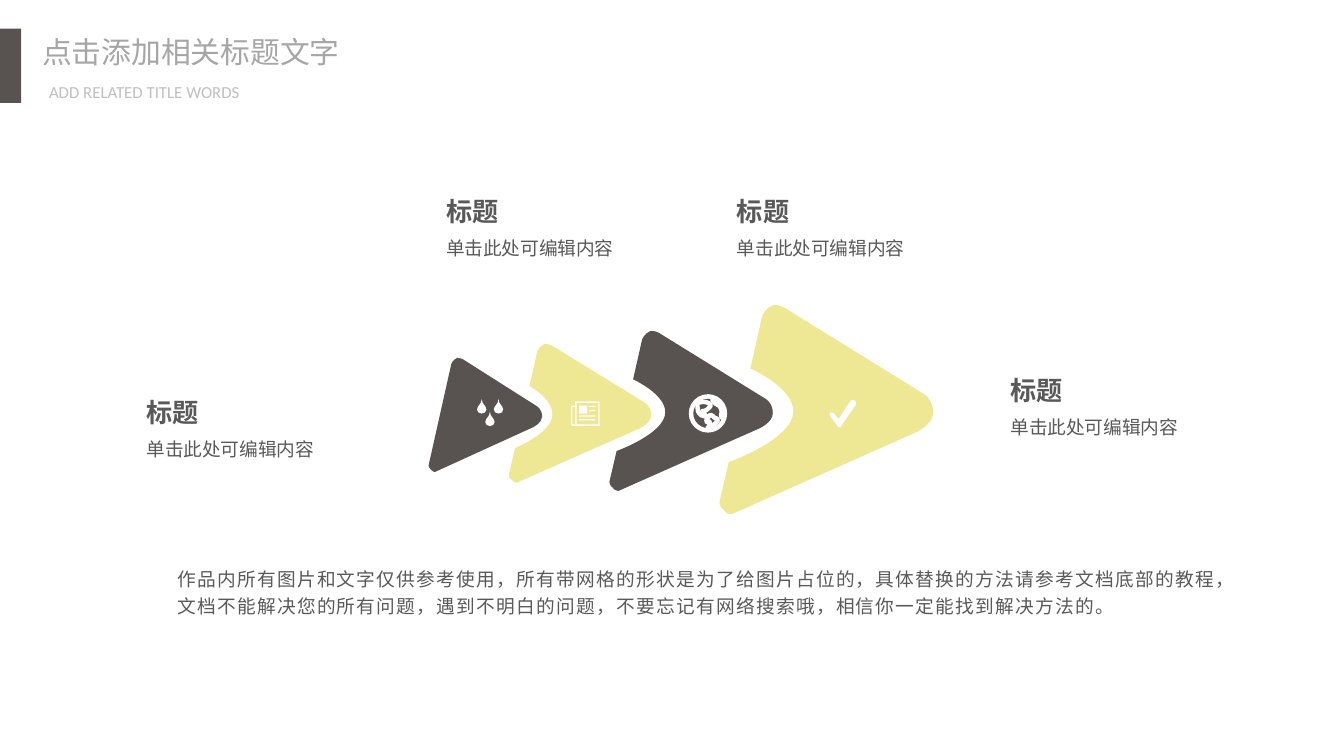
from pptx import Presentation
from pptx.dml.color import RGBColor
from pptx.enum.shapes import MSO_SHAPE
from pptx.enum.text import MSO_ANCHOR, MSO_AUTO_SIZE, PP_ALIGN
from pptx.oxml.ns import qn
from pptx.util import Pt

RECTANGLE, OVAL = MSO_SHAPE.RECTANGLE, MSO_SHAPE.OVAL
MIDDLE, NO_AUTOSIZE = MSO_ANCHOR.MIDDLE, MSO_AUTO_SIZE.NONE
LEFT, JUSTIFY = PP_ALIGN.LEFT, PP_ALIGN.JUSTIFY

THEME = {
    "dark": "585251", "yellow": "EEE895", "white": "FFFFFF", "paper": "FCFCFC",
    "text": "595959", "title": "A6A6A6", "subtitle": "BFBFBF",
    "chinese": "Noto Sans CJK SC", "latin": "Calibri",
    "title_size": 16, "subtitle_size": 9, "heading_size": 14, "body_size": 10,
}

# Content
TITLE = "点击添加相关标题文字"
SUBTITLE = "ADD RELATED TITLE WORDS"
HEADING, DETAIL = "标题", "单击此处可编辑内容"
LABEL_CORNERS = [(239, 104.6), (394.8, 104.6), (541.4, 200.4), (78.5, 212)]
DETAIL_DROP = 22.3
SUMMARY = (
    "作品内所有图片和文字仅供参考使用，所有带网格的形状是为了给图片占位的，"
    "具体替换的方法请参考文档底部的教程，文档不能解决您的所有问题，"
    "遇到不明白的问题，不要忘记有网络搜索哦，相信你一定能找到解决方法的。"
)

# Outlines: a pair is a corner, six numbers are a Bezier curve.
# Arrows and drops are drawn in a 100 by 100 box and scaled.
ARROW_TIP = [(100, 51.6), (100, 57.3, 92, 61, 92, 61), (5.7, 100),
             (5.7, 100, 3, 100, 2, 98), (0, 96.8, 0, 94.3, 0, 94.3)]
ARROW_TOP = [(20, 5.7), (20, 5.7, 21.4, 1.9, 25.2, 0.4),
             (27.7, 0, 30.8, 1.9, 30.8, 1.9), (95.6, 42.7),
             (95.6, 42.7, 100, 45.2, 100, 51.6)]
DROP = [(50, 0), (50, 37, 100, 45, 100, 73), (100, 88, 78, 100, 50, 100),
        (22, 100, 0, 88, 0, 73), (0, 45, 50, 37, 50, 0)]
DROP_CORNERS = [(255.6, 213.8), (264.6, 213.8), (260, 220.5)]
DROP_SIZE = (5, 7.8)

# Icons, in points on the slide
CHECK = [(450, 229), (450, 229, 449, 229, 448.6, 228.2), (445, 223.2),
         (444.2, 222.5, 444.2, 221.8, 445, 221),
         (445.7, 221, 446.4, 221, 447.1, 221.8), (449.3, 224.6), (455.8, 214.6),
         (456.5, 214.6, 457.2, 213.8, 457.9, 214.6),
         (458.6, 214.6, 458.6, 216, 458.6, 216.7), (450.7, 228.2),
         (450.7, 229, 450, 229, 450, 229)]
PAPER_FRAME = [
    [(308.2, 215), (321.3, 215), (321.3, 228.2), (306.6, 228.2), (306, 227.4),
     (306, 217.3), (308.2, 217.3)],
    [(309, 215.8), (309, 227.4), (320.6, 227.4), (320.6, 215.8)],
    [(306.7, 218), (306.7, 227), (307.4, 227.4), (308.2, 227), (308.2, 218)],
]
PAPER_BLOCKS = [("paper", (310.3, 217.4, 4.3, 4.3)), ("white", (315.4, 217.4, 3.6, 0.7)),
                ("paper", (315.4, 219.6, 3.6, 0.7)), ("white", (310.3, 222.5, 8.6, 0.7)),
                ("paper", (310.3, 224.6, 8.6, 0.7))]
GLOBE = (370.2, 212.4, 18.2, 18.2)
GLOBE_LINE = 2.38
WEST = [(373.7, 218.2), (373.7, 219.6, 373.7, 221, 375.8, 222.5),
        (378, 223.2, 378, 223.2, 378.7, 223.2), (378, 222.5), (377.3, 221.8),
        (376.6, 221), (375.8, 220.3, 376.6, 219.6, 377.3, 220.3),
        (378.7, 220.3, 378.7, 218.9, 380.2, 218.2),
        (382.3, 216.7, 378.7, 215.3, 377.3, 215.3),
        (375.1, 215.3, 373, 216, 373.7, 216.7)]
SOUTH = [(378.7, 224.6), (378.7, 225.4, 378, 224.6, 378.7, 226.1),
         (380.2, 226.8, 380.2, 224.6, 380.2, 226.8),
         (380.2, 229.7, 378, 229.7, 379.4, 229),
         (381.6, 229, 380.9, 229, 382.3, 227.5),
         (383.8, 226.8, 383.8, 226.1, 384.5, 225.4),
         (385.2, 223.9, 383.8, 224.6, 383, 223.9),
         (382.3, 223.2, 380.9, 221.8, 380.2, 222.5)]
EAST = [(381.6, 213.1), (381.6, 213.8, 381.6, 215.3, 383, 216),
        (383.8, 216.7, 385.9, 217.4, 385.9, 218.2),
        (385.9, 219.6, 387.4, 220.3, 386.6, 221),
        (386.6, 221.8, 385.9, 223.2, 386.6, 223.9), (388.1, 223.9)]


def color(name):
    return RGBColor.from_string(THEME[name])


def arrow_outline(depth):
    """Arrow whose left side is cut by a notch of the given depth, if any."""
    notch = [(4.4, 75.2), (4.4, 75.2, depth, 64.3, depth, 51),
             (depth, 39.5, 14.5, 30.6, 14.5, 30.6)] if depth else []
    return ARROW_TIP + notch + ARROW_TOP


def scaled(outline, left, top, width, height):
    """Move an outline from the 100 by 100 box to its place on the slide."""
    return [tuple(value * (height if i % 2 else width) / 100 + (top if i % 2 else left)
                  for i, value in enumerate(step)) for step in outline]


def paint(shape, fill=None, line=None):
    shape.shadow.inherit = False
    if fill:
        shape.fill.solid()
        shape.fill.fore_color.rgb = color(fill)
    else:
        shape.fill.background()
    if line:
        shape.line.color.rgb = color(line)
        shape.line.width = Pt(GLOBE_LINE)
    else:
        shape.line.fill.background()
    return shape


def add_outline(slide, contours, fill=None, line=None, close=True):
    builder = None
    for contour in contours:
        start, *points = [(Pt(step[i]), Pt(step[i + 1]))
                          for step in contour for i in range(0, len(step), 2)]
        if builder is None:
            builder = slide.shapes.build_freeform(*start)
        else:
            builder.move_to(*start)
        builder.add_line_segments(points, close=close)
    shape = builder.convert_to_shape()
    # Join each three points of a curve into one Bezier segment
    segments = iter(list(shape._element.iter(qn("a:lnTo"))))
    for contour in contours:
        for step in contour[1:]:
            segment = next(segments)
            if len(step) == 6:
                curve = segment.makeelement(qn("a:cubicBezTo"), {})
                segment.addprevious(curve)
                for part in (segment, next(segments), next(segments)):
                    curve.append(part[0])
                    part.getparent().remove(part)
    return paint(shape, fill, line)


def add_preset(slide, kind, box, fill=None, line=None):
    return paint(slide.shapes.add_shape(kind, *map(Pt, box)), fill, line)


def set_text(shape, box, text, size, ink, face="chinese", bold=False,
             align=LEFT, margins=(0, 0), wrap=True):
    shape.left, shape.top, shape.width, shape.height = map(Pt, box)
    frame = shape.text_frame
    frame.text = text
    frame.word_wrap, frame.auto_size, frame.vertical_anchor = wrap, NO_AUTOSIZE, MIDDLE
    frame.margin_left = frame.margin_right = Pt(margins[0])
    frame.margin_top = frame.margin_bottom = Pt(margins[1])
    paragraph = frame.paragraphs[0]
    paragraph.alignment = align
    font = paragraph.runs[0].font
    font.name, font.size, font.bold = THEME[face], Pt(THEME[size]), bold
    font.color.rgb = color(ink)
    east_asian = font._element.makeelement(qn("a:ea"), {"typeface": THEME[face]})
    font._element.append(east_asian)
    return paragraph


def add_text(slide, box, *args, **options):
    return set_text(slide.shapes.add_textbox(*map(Pt, box)), box, *args, **options)


def main():
    presentation = Presentation()
    presentation.slide_width, presentation.slide_height = Pt(720), Pt(405)
    slide = presentation.slides.add_slide(presentation.slide_layouts[5])

    # Heading
    add_preset(slide, RECTANGLE, (0, 15.4, 11.4, 39.8), "dark")
    set_text(slide.shapes.title, (16.9, 15.1, 172.8, 25.2), TITLE, "title_size",
             "title", margins=(5.6, 2.8), wrap=False)
    add_text(slide, (20.7, 41, 160.6, 16.6), SUBTITLE, "subtitle_size", "subtitle",
             face="latin", align=JUSTIFY, margins=(5.6, 2.8))

    # Icons
    drops = [add_outline(slide, [scaled(DROP, *corner, *DROP_SIZE)
                                 for corner in DROP_CORNERS], "white")]
    check = [add_outline(slide, [CHECK], "white")]
    paper = [add_outline(slide, PAPER_FRAME, "paper")]
    paper += [add_preset(slide, RECTANGLE, box, fill) for fill, box in PAPER_BLOCKS]
    globe = [add_preset(slide, OVAL, GLOBE, line="white")]
    globe += [add_outline(slide, [land], line="white", close=land is not EAST)
              for land in (WEST, SOUTH, EAST)]

    # Arrows, each grouped with its icon
    for depth, box, fill, icon in (
            (0, (229.6, 191.5, 60.8, 61.3), "dark", drops),
            (34.6, (385.4, 163, 114.5, 112.5), "yellow", check),
            (30.6, (272.6, 184, 76.3, 74.6), "yellow", paper),
            (34.2, (326.5, 177, 87.5, 86), "dark", globe)):
        arrow = add_outline(slide, [scaled(arrow_outline(depth), *box)], fill)
        slide.shapes.add_group_shape([arrow] + icon)

    # Labels
    for left, top in LABEL_CORNERS:
        add_text(slide, (left, top, 128.2, 17.3), HEADING, "heading_size", "text", bold=True)
        add_text(slide, (left, top + DETAIL_DROP, 122.4, 12.2), DETAIL, "body_size", "text")

    # Summary
    summary = add_text(slide, (95, 301.9, 563, 28.8), SUMMARY, "body_size", "text")
    summary.line_spacing = Pt(14.5)
    summary.runs[0].font._element.set("spc", "75")

    presentation.save("out.pptx")


if __name__ == "__main__":
    main()
